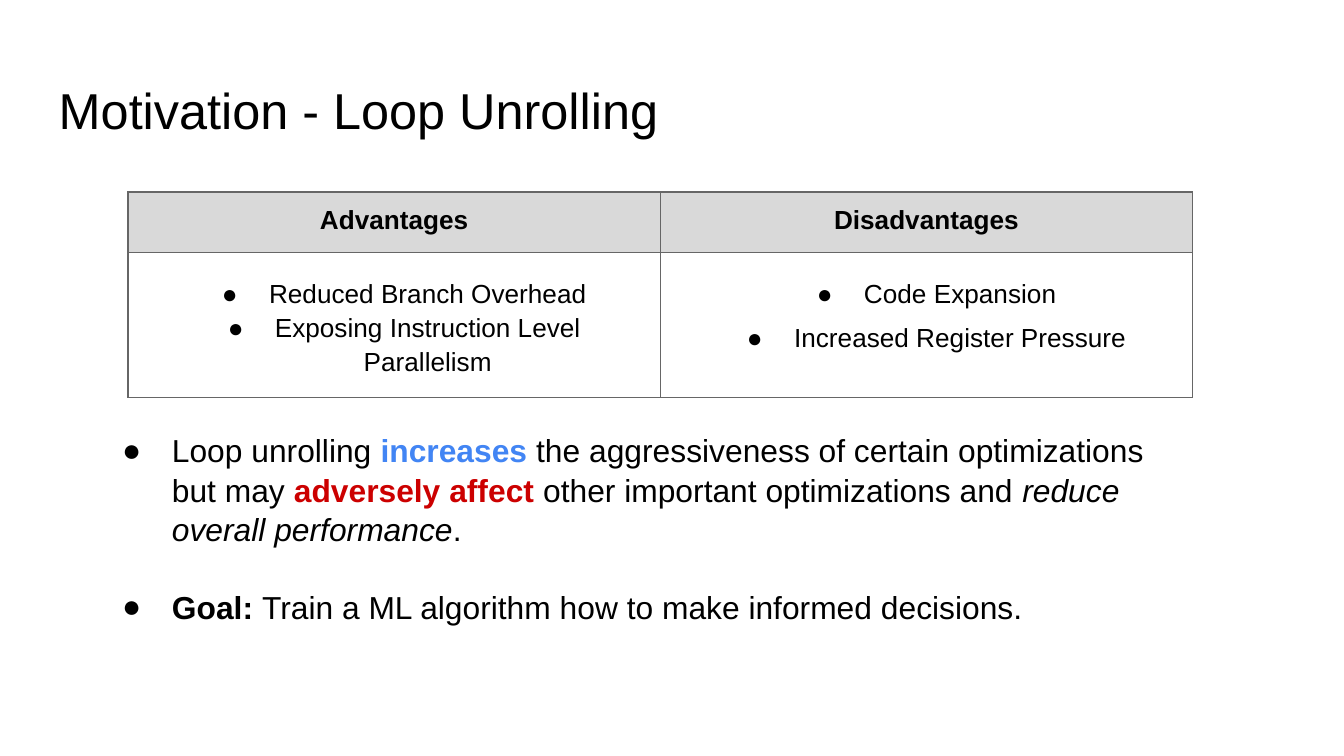
"""Build the loop unrolling motivation slide."""
from lxml import etree
from pptx import Presentation
from pptx.dml.color import RGBColor
from pptx.enum import text
from pptx.oxml import ns
from pptx.util import Cm, Pt


def paint(fill, color):
    fill.solid()
    fill.fore_color.rgb = RGBColor.from_string(color)


def write(paragraph, words, size=14, color="000000", bold=False, italic=False,
          align=text.PP_ALIGN.LEFT, spacing=None, hang=None):
    run = paragraph.add_run()
    run.text = words
    run.font.name = "Arial"
    run.font.size = Pt(size)
    run.font.bold = bold
    run.font.italic = italic
    paint(run.font.fill, color)
    paragraph.alignment = align
    if spacing:
        paragraph.line_spacing = spacing
    if hang:
        props = paragraph._p.get_or_add_pPr()
        props.set("marL", str(Cm(1.27)))
        props.set("indent", str(-Cm(hang)))
        bullet_color = etree.SubElement(props, ns.qn("a:buClr"))
        etree.SubElement(bullet_color, ns.qn("a:srgbClr"), val="000000")
        etree.SubElement(props, ns.qn("a:buFont"), typeface="Arial")
        etree.SubElement(props, ns.qn("a:buChar"), char="●")


deck = Presentation()
deck.slide_width, deck.slide_height = Cm(25.4), Cm(14.29)
slide = deck.slides.add_slide(deck.slide_layouts[5])
center = text.PP_ALIGN.CENTER

heading = slide.shapes.title
heading.left, heading.top, heading.width, heading.height = Cm(0.86), Cm(1.24), Cm(23.67), Cm(1.6)
write(heading.text_frame.paragraphs[0], "Motivation - Loop Unrolling", size=27)

effects = [
    ("Advantages", [("Reduced Branch Overhead", 1.5),
                    ("Exposing Instruction Level Parallelism", 1.15)]),
    ("Disadvantages", [("Code Expansion", 1.5),
                       ("Increased Register Pressure", 1.5)]),
]
comparison = slide.shapes.add_table(2, 2, Cm(2.42), Cm(3.63), Cm(20.12), Cm(3.89)).table
comparison.first_row = comparison.horz_banding = False
comparison.rows[0].height, comparison.rows[1].height = Cm(1.14), Cm(2.75)

for column, (label, points) in enumerate(effects):
    header, details = comparison.cell(0, column), comparison.cell(1, column)
    paint(header.fill, "D9D9D9")
    details.fill.background()
    write(header.text_frame.paragraphs[0], label, bold=True, align=center)
    for index, (point, spacing) in enumerate(points):
        frame = details.text_frame
        paragraph = frame.add_paragraph() if index else frame.paragraphs[0]
        write(paragraph, point, align=center, spacing=spacing, hang=0.89)

for cell in comparison.iter_cells():
    cell.margin_left = cell.margin_right = cell.margin_top = cell.margin_bottom = Cm(0.25)
    cell_props = cell._tc.get_or_add_tcPr()
    for index, side in enumerate(("a:lnL", "a:lnR", "a:lnT", "a:lnB")):
        border = etree.Element(ns.qn(side), w=str(Pt(0.75)))
        border_fill = etree.SubElement(border, ns.qn("a:solidFill"))
        etree.SubElement(border_fill, ns.qn("a:srgbClr"), val="666666")
        cell_props.insert(index, border)

summary = slide.shapes.add_textbox(Cm(1.73), Cm(7.87), Cm(20.96), Cm(5.49))
for frame in (heading.text_frame, summary.text_frame):
    frame.word_wrap = True
    frame.auto_size = text.MSO_AUTO_SIZE.NONE
    frame.vertical_anchor = text.MSO_ANCHOR.TOP
    frame.margin_left = frame.margin_right = frame.margin_top = frame.margin_bottom = Cm(0.25)

statements = [
    [("Loop unrolling ", {}),
     ("increases", {"color": "4285F4", "bold": True}),
     (" the aggressiveness of certain optimizations but may ", {}),
     ("adversely affect", {"color": "CC0000", "bold": True}),
     (" other important optimizations and ", {}),
     ("reduce overall performance", {"italic": True}),
     (".", {})],
    [("Goal: ", {"bold": True}),
     ("Train a ML algorithm how to make informed decisions.", {})],
]
for index, statement in enumerate(statements):
    frame = summary.text_frame
    paragraph = frame.add_paragraph() if index else frame.paragraphs[0]
    paragraph.space_before = Pt(20.4 * index)
    for part, (words, style) in enumerate(statement):
        write(paragraph, words, size=17, spacing=1.04, hang=None if part else 0.94, **style)

deck.save("out.pptx")
